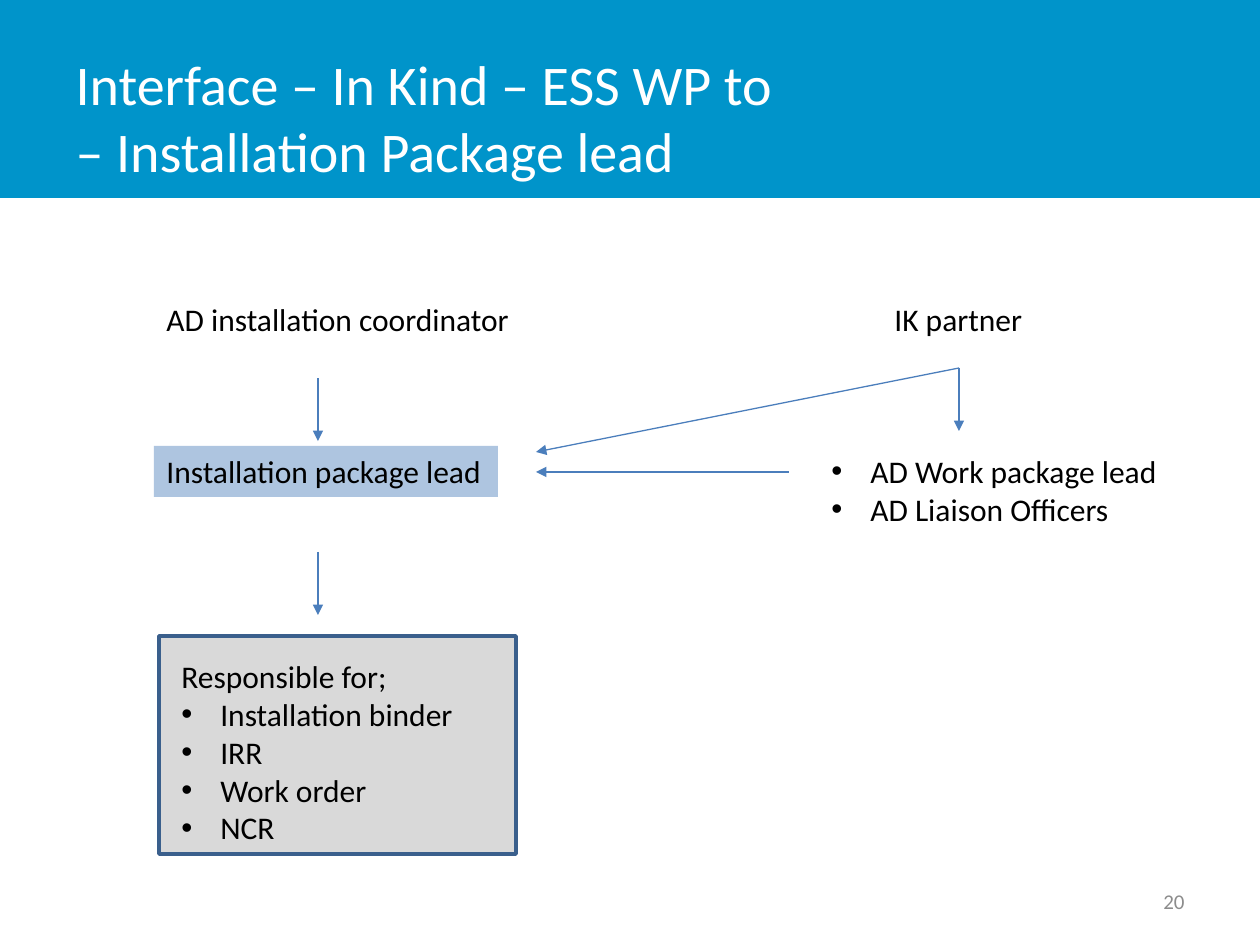
from dataclasses import dataclass

from lxml import etree
from pptx import Presentation
from pptx import util as u
from pptx.dml.color import RGBColor
from pptx.enum import shapes, text
from pptx.oxml import ns

EMU_PER_PX = u.Inches(1) / 126
FONT = "Calibri"
ARROW_BLUE = "4B7EBC"
BULLET_INDENT = 39


@dataclass(frozen=True)
class Box:
    left: int
    top: int
    width: int
    height: int


@dataclass(frozen=True)
class Label:
    box: Box
    heading: str = ""
    bullets: tuple[str, ...] = ()
    fill: str = ""


@dataclass(frozen=True)
class Arrow:
    start: tuple[int, int]
    end: tuple[int, int]


LABELS = [
    Label(Box(154, 294, 372, 89), "AD installation coordinator"),
    Label(Box(154, 446, 344, 51), "Installation package lead", fill="AEC5E0"),
    Label(Box(819, 446, 354, 127),
          bullets=("AD Work package lead", "AD Liaison Officers")),
    Label(Box(882, 294, 155, 89), "IK partner"),
    Label(Box(169, 651, 300, 204), "Responsible for;",
          ("Installation binder", "IRR", "Work order", "NCR")),
]

LEAD_X, PARTNER_X, LEAD_SIDE_X = 318, 959, 536
PARTNER_Y, DROP = 368, 63
ARROWS = [
    Arrow((789, 472), (LEAD_SIDE_X, 472)),
    Arrow((LEAD_X, 378), (LEAD_X, 378 + DROP)),
    Arrow((LEAD_X, 552), (LEAD_X, 552 + DROP)),
    Arrow((PARTNER_X, PARTNER_Y), (PARTNER_X, PARTNER_Y + DROP)),
    Arrow((PARTNER_X, PARTNER_Y), (LEAD_SIDE_X, 452)),
]


def px(length: int) -> u.Emu:
    return u.Emu(round(length * EMU_PER_PX))


def place(box: Box) -> tuple[u.Emu, ...]:
    return px(box.left), px(box.top), px(box.width), px(box.height)


def color(value: str) -> RGBColor:
    return RGBColor.from_string(value)


def set_font(paragraph, size: int, value: str) -> None:
    paragraph.font.name = FONT
    paragraph.font.size = u.Pt(size)
    paragraph.font.color.rgb = color(value)


def add_panel(slide, box: Box, fill: str, line: str = ""):
    panel = slide.shapes.add_shape(shapes.MSO_SHAPE.RECTANGLE, *place(box))
    panel.shadow.inherit = False
    panel.fill.solid()
    panel.fill.fore_color.rgb = color(fill)
    if line:
        panel.line.color.rgb = color(line)
        panel.line.width = u.Pt(2)
    else:
        panel.line.fill.background()
    return panel


def add_bullet(paragraph) -> None:
    properties = paragraph._p.get_or_add_pPr()
    properties.set("marL", str(px(BULLET_INDENT)))
    properties.set("indent", str(-px(BULLET_INDENT)))
    etree.SubElement(properties, ns.qn("a:buFont"), typeface="Arial")
    etree.SubElement(properties, ns.qn("a:buChar"), char="•")


def add_label(slide, label: Label) -> None:
    if label.fill:
        shape = add_panel(slide, label.box, label.fill)
    else:
        shape = slide.shapes.add_textbox(*place(label.box))
    frame = shape.text_frame
    frame.word_wrap = True
    frame.vertical_anchor = text.MSO_ANCHOR.TOP
    headings = (label.heading,) if label.heading else ()
    frame.text = "\n".join(headings + label.bullets)
    for index, paragraph in enumerate(frame.paragraphs):
        paragraph.alignment = text.PP_ALIGN.LEFT
        if index >= len(headings):
            add_bullet(paragraph)
        set_font(paragraph, 18, "000000")


def add_arrow(slide, arrow: Arrow) -> None:
    line = slide.shapes.add_connector(
        shapes.MSO_CONNECTOR.STRAIGHT,
        *(px(value) for value in arrow.start + arrow.end))
    line.line.color.rgb = color(ARROW_BLUE)
    line.line.width = u.Pt(0.75)
    etree.SubElement(line.line._get_or_add_ln(), ns.qn("a:tailEnd"), type="triangle")
    etree.SubElement(line._element.spPr, ns.qn("a:effectLst"))


def add_title(slide) -> None:
    """Format the title and lay the header band behind it."""
    band = add_panel(slide, Box(0, 0, 1260, 198), "0094CA")
    title = slide.shapes.title
    title._element.addprevious(band._element)
    title.left, title.top, title.width, title.height = place(Box(63, 38, 984, 157))
    frame = title.text_frame
    frame.text = "Interface – In Kind – ESS WP to \v– Installation Package lead"
    frame.auto_size = text.MSO_AUTO_SIZE.NONE
    frame.vertical_anchor = text.MSO_ANCHOR.MIDDLE
    frame.paragraphs[0].alignment = text.PP_ALIGN.LEFT
    set_font(frame.paragraphs[0], 32, "FFFFFF")


def add_page_number(slide) -> None:
    frame = slide.shapes.add_textbox(*place(Box(903, 876, 294, 50))).text_frame
    frame.word_wrap = True
    frame.vertical_anchor = text.MSO_ANCHOR.MIDDLE
    frame.text = "20"
    frame.paragraphs[0].alignment = text.PP_ALIGN.RIGHT
    set_font(frame.paragraphs[0], 12, "8C8C8C")


def main() -> None:
    deck = Presentation()
    deck.slide_width, deck.slide_height = px(1260), px(945)
    slide = deck.slides.add_slide(deck.slide_layouts.get_by_name("Title Only"))
    add_title(slide)
    add_panel(slide, Box(159, 636, 357, 218), "D9D9D9", line="3A5F8C")
    add_page_number(slide)
    for label in LABELS:
        add_label(slide, label)
    for arrow in ARROWS:
        add_arrow(slide, arrow)
    deck.save("out.pptx")


if __name__ == "__main__":
    main()
